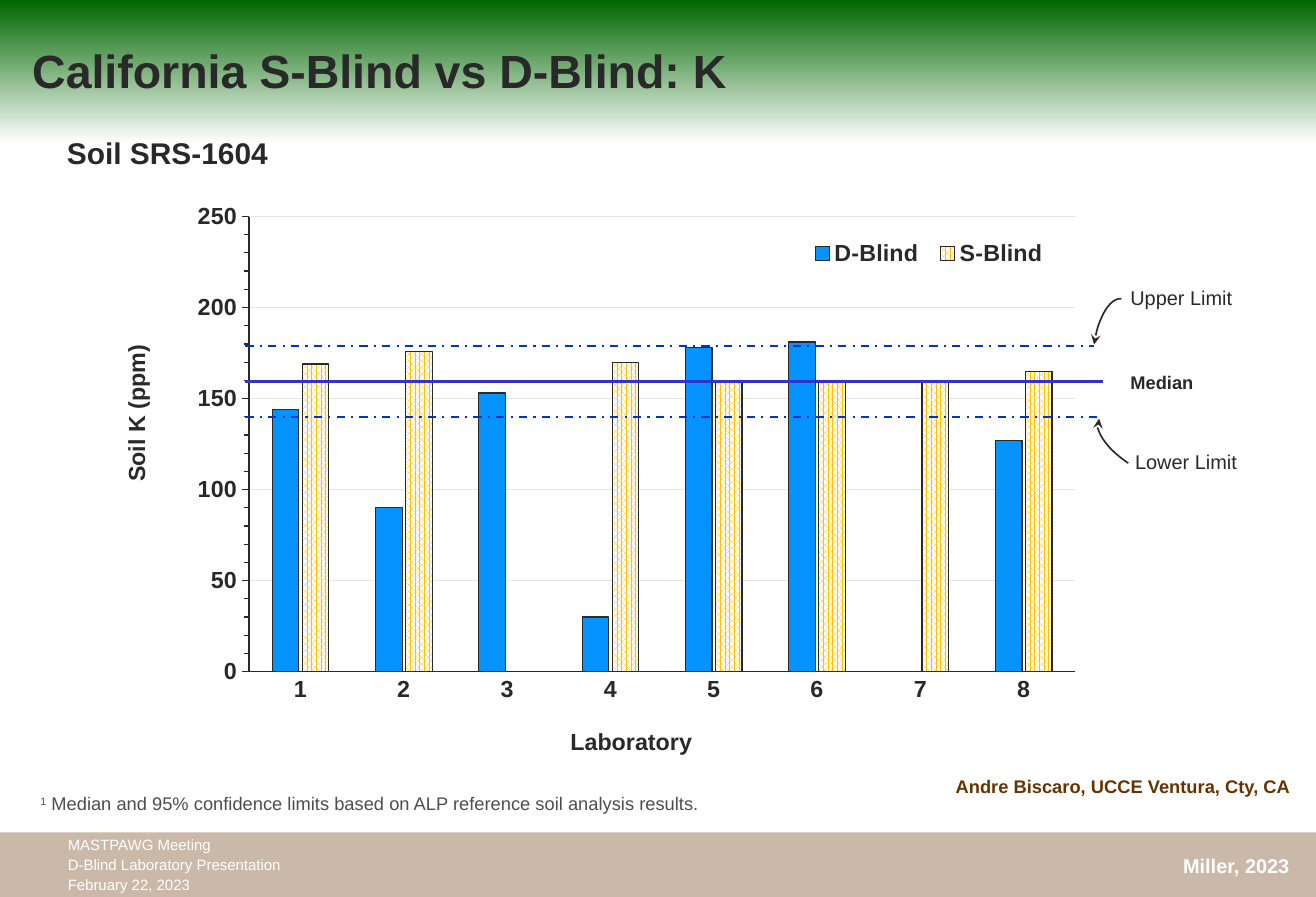
"""Build the slide comparing single-blind and double-blind soil potassium results."""
from lxml.etree import SubElement
from pptx import Presentation
from pptx.chart.data import CategoryChartData
from pptx.dml.color import RGBColor
from pptx.enum.chart import XL_CHART_TYPE, XL_LEGEND_POSITION, XL_TICK_MARK
from pptx.enum.dml import MSO_LINE, MSO_PATTERN
from pptx.enum.shapes import MSO_CONNECTOR, MSO_SHAPE
from pptx.enum.text import MSO_ANCHOR, MSO_AUTO_SIZE, PP_ALIGN
from pptx.oxml import parse_xml
from pptx.oxml.ns import nsdecls, qn
from pptx.util import Cm, Pt

INK = RGBColor(0x29, 0x29, 0x29)
GREY = RGBColor(0x4D, 0x4D, 0x4D)
GRID = RGBColor(0xE4, 0xE4, 0xE4)
WHITE = RGBColor(0xFF, 0xFF, 0xFF)
GREEN = RGBColor(0x00, 0x66, 0x00)
BROWN = RGBColor(0x66, 0x33, 0x00)
AZURE = RGBColor(0x05, 0x94, 0xFF)
GOLD = RGBColor(0xFF, 0xC0, 0x00)
MEDIAN_BLUE = RGBColor(0x33, 0x33, 0xCC)
LIMIT_BLUE = RGBColor(0x00, 0x33, 0xCC)


def style(font, size, color, bold=False):
    font.name = "Arial"
    font.size = Pt(size)
    font.bold = bold
    font.color.rgb = color


def add_label(shapes, text, box, size, color=INK, bold=False, wrap=False, spacing=None):
    label = shapes.add_textbox(*map(Cm, box))
    frame = label.text_frame
    frame.text = text
    frame.word_wrap = wrap
    frame.auto_size = MSO_AUTO_SIZE.SHAPE_TO_FIT_TEXT
    for paragraph in frame.paragraphs:
        if spacing:
            paragraph.line_spacing = Pt(spacing)
        for run in paragraph.runs:
            style(run.font, size, color, bold)
    return label


deck = Presentation()
deck.slide_width, deck.slide_height = Cm(27.94), Cm(19.05)
slide = deck.slides.add_slide(deck.slide_layouts[5])
shapes = slide.shapes

backdrop = slide.background.fill
backdrop.gradient()
backdrop.gradient_angle = 270
for stop, color, position in zip(backdrop.gradient_stops, (GREEN, WHITE), (0, 0.16)):
    stop.color.rgb = color
    stop.position = position

title = shapes.title
title.left, title.top, title.width, title.height = Cm(0.43), Cm(0.13), Cm(17.78), Cm(2.72)
title.text_frame.text = "California S-Blind vs D-Blind: K"
title.text_frame.vertical_anchor = MSO_ANCHOR.MIDDLE
title.text_frame.paragraphs[0].alignment = PP_ALIGN.LEFT
style(title.text_frame.paragraphs[0].runs[0].font, 28, INK, True)

results = CategoryChartData()
results.categories = [str(lab) for lab in range(1, 9)]
results.add_series("D-Blind", (144, 90, 153, 30, 178, 181, None, 127))
results.add_series("S-Blind", (169, 176, None, 170, 160, 160, 160, 165))
chart = shapes.add_chart(
    XL_CHART_TYPE.COLUMN_CLUSTERED, Cm(3.81), Cm(4.32), Cm(19.41), Cm(11.81), results
).chart
style(chart.font, 10, GREY)
chart.has_title = False
chart.has_legend = True
chart.legend.position = XL_LEGEND_POSITION.BOTTOM
chart.legend.include_in_layout = False
style(chart.legend.font, 14, INK, True)

bars = chart.plots[0]
bars.gap_width, bars.overlap = 176, -13
bars.vary_by_categories = False
d_blind, s_blind = bars.series
d_blind.format.fill.solid()
d_blind.format.fill.fore_color.rgb = AZURE
s_blind.format.fill.patterned()
s_blind.format.fill.pattern = MSO_PATTERN.PERCENT_75
s_blind.format.fill.fore_color.rgb = GOLD
s_blind.format.fill.back_color.rgb = WHITE
for series in (d_blind, s_blind):
    series.format.line.color.rgb = INK
    series.format.line.width = Pt(0.75)

labs, potassium = chart.category_axis, chart.value_axis
for axis, tick, width in ((labs, XL_TICK_MARK.NONE, 1), (potassium, XL_TICK_MARK.OUTSIDE, 0.75)):
    axis.major_tick_mark = axis.minor_tick_mark = tick
    axis.format.line.color.rgb = INK
    axis.format.line.width = Pt(width)
    style(axis.tick_labels.font, 14, INK, True)
potassium.minimum_scale, potassium.maximum_scale = 0, 250
potassium.major_unit, potassium.minor_unit = 50, 10
potassium.has_major_gridlines = True
potassium.major_gridlines.format.line.color.rgb = GRID
potassium.major_gridlines.format.line.width = Pt(0.75)

plot_area = chart._chartSpace.chart.plotArea
legend = chart.legend._element
for part, inner, extents in (
    (plot_area, True, (0.076, 0.023, 0.904, 0.819)),
    (legend, False, (0.68, 0.06, 0.28, 0.06)),
):
    for stale in part.findall(qn("c:layout")):
        part.remove(stale)
    layout = parse_xml(f"<c:layout {nsdecls('c')}><c:manualLayout/></c:layout>")
    settings = [("layoutTarget", "inner")] if inner else []
    settings += [("xMode", "edge"), ("yMode", "edge"), *zip("xywh", extents)]
    for tag, value in settings:
        SubElement(layout[0], qn(f"c:{tag}")).set("val", str(value))
    part.insert(0 if inner else 1, layout)

footer = shapes.add_group_shape().shapes
band = footer.add_shape(MSO_SHAPE.RECTANGLE, 0, Cm(17.68), Cm(27.94), Cm(1.37))
band.shadow.inherit = False
band.fill.solid()
band.fill.fore_color.rgb = BROWN
band.line.fill.background()
band_color = band._element.spPr.find(qn("a:solidFill"))[0]
SubElement(band_color, qn("a:alpha")).set("val", "34000")
add_label(footer, "Miller, 2023", (24.87, 18.01, 2.79, 0.76), 12, WHITE, True)
meeting = "MASTPAWG Meeting\nD-Blind Laboratory Presentation\nFebruary 22, 2023"
add_label(footer, meeting, (1.19, 17.58, 5.26, 1.55), 9, WHITE, spacing=12)

note = add_label(shapes, "1", (0.61, 16.71, 14.66, 0.74), 11, GREY, wrap=True)
marker = note.text_frame.paragraphs[0].runs[0]
marker._r.get_or_add_rPr().set("baseline", "30000")
note_body = note.text_frame.paragraphs[0].add_run()
note_body.text = " Median and 95% confidence limits based on ALP reference soil analysis results."
style(note_body.font, 11, GREY)

add_label(shapes, "Soil K (ppm)", (1.17, 8.33, 3.45, 0.86), 14, bold=True).rotation = 270
add_label(shapes, "Soil SRS-1604", (1.17, 2.74, 4.83, 1.02), 18, bold=True)
add_label(shapes, "Laboratory", (11.86, 15.32, 3.1, 0.86), 14, bold=True)
add_label(shapes, "Median", (23.75, 7.77, 1.85, 0.74), 11, bold=True)
add_label(shapes, "Upper Limit", (23.75, 5.94, 2.69, 0.76), 12)
add_label(shapes, "Lower Limit", (23.85, 9.42, 2.69, 0.76), 12)
add_label(shapes, "Andre Biscaro, UCCE Ventura, Cty, CA", (20.04, 15.95, 7.82, 0.99), 11,
          BROWN, True, wrap=True, spacing=24)

for right, level, color, width, dash in (
    (23.42, 8.1, MEDIAN_BLUE, 1.5, None),
    (23.37, 8.86, LIMIT_BLUE, 1.25, MSO_LINE.DASH_DOT),
    (23.22, 7.34, LIMIT_BLUE, 1.25, MSO_LINE.DASH_DOT),
):
    rule = shapes.add_connector(MSO_CONNECTOR.STRAIGHT, Cm(5.21), Cm(level), Cm(right), Cm(level))
    rule.line.color.rgb = color
    rule.line.width = Pt(width)
    rule.line.dash_style = dash
    SubElement(rule._element.spPr, qn("a:effectLst"))

for left, top, angle, end in ((22.63, 6.93, 277.7, "headEnd"), (23.16, 9.02, 213.6, "tailEnd")):
    pointer = shapes.add_shape(MSO_SHAPE.ARC, Cm(left), Cm(top), Cm(2.08), Cm(0.89))
    pointer.rotation = angle
    pointer.shadow.inherit = False
    pointer.fill.background()
    pointer.line.color.rgb = INK
    pointer.line.width = Pt(1)
    SubElement(pointer.line._get_or_add_ln(), qn(f"a:{end}")).set("type", "stealth")

deck.save("out.pptx")
